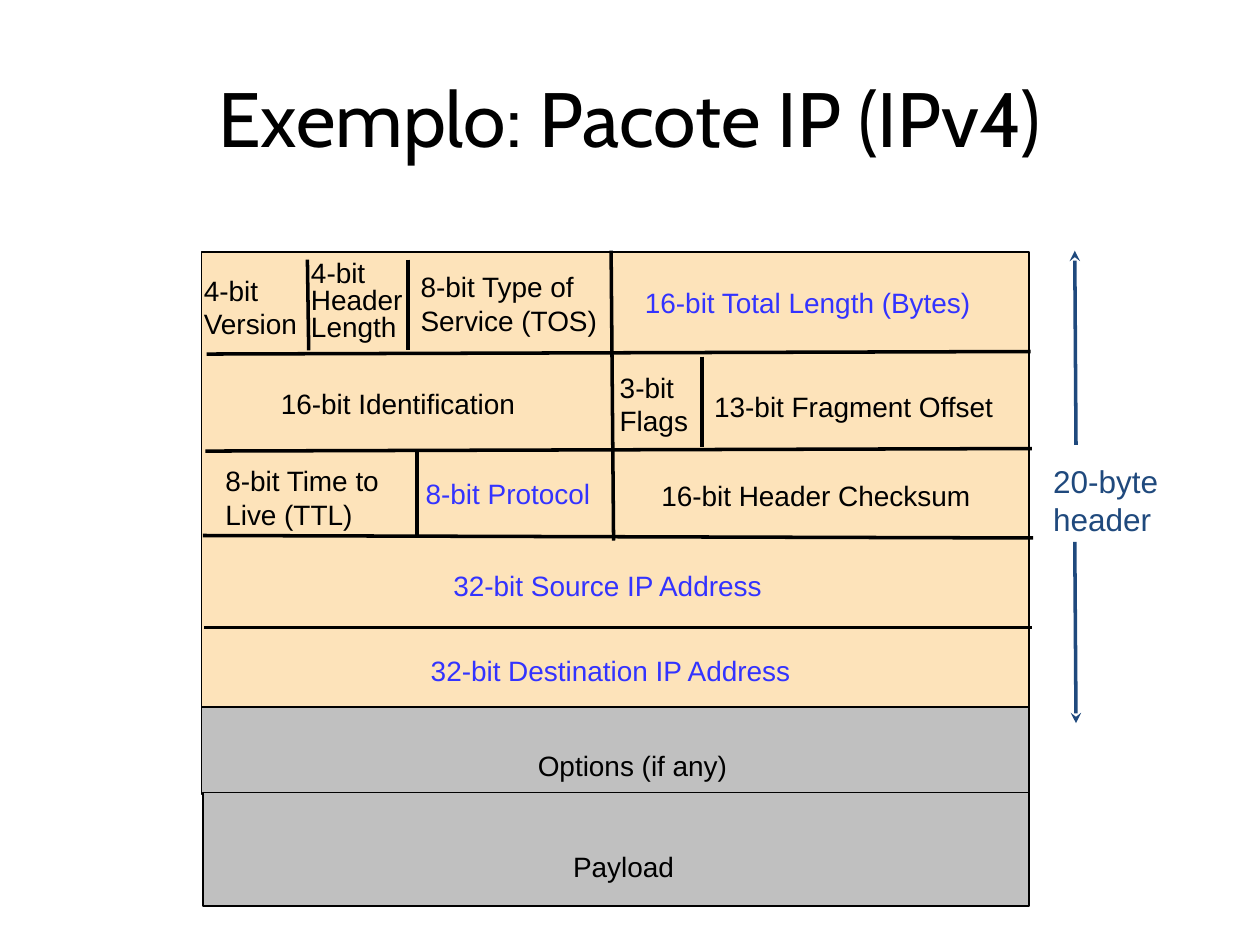
from lxml.etree import SubElement
from pptx import Presentation
from pptx.dml.color import RGBColor
from pptx.enum.shapes import MSO_CONNECTOR, MSO_SHAPE
from pptx.enum.text import MSO_ANCHOR, MSO_AUTO_SIZE, PP_ALIGN
from pptx.oxml.ns import qn
from pptx.util import Inches, Pt

COLORS = {
    "black": "000000",
    "highlight": "3333FF",
    "navy": "1F497D",
    "header": "FDE3BA",
    "body": "C0C0C0",
}

presentation = Presentation()
presentation.slide_width = Inches(10)
presentation.slide_height = Inches(7.5)
slide = presentation.slides.add_slide(presentation.slide_layouts[6])


def add_text(box, text, color="black", size=16, font="Arial", spacing=None):
    """Add a text box with one paragraph per line of text."""
    shape = slide.shapes.add_textbox(*map(Inches, box))
    frame = shape.text_frame
    frame.text = text
    frame.word_wrap = False
    frame.auto_size = MSO_AUTO_SIZE.SHAPE_TO_FIT_TEXT
    for paragraph in frame.paragraphs:
        paragraph.line_spacing = spacing
        formats = {"name": font, "size": Pt(size)}
        for name, value in formats.items():
            setattr(paragraph.runs[0].font, name, value)
        paragraph.runs[0].font.color.rgb = RGBColor.from_string(COLORS[color])
    return frame


def add_line(start, end, color="black", arrow=None):
    """Add a line; arrow is headEnd (at start) or tailEnd (at end)."""
    connector = slide.shapes.add_connector(
        MSO_CONNECTOR.STRAIGHT, *map(Inches, start + end))
    connector.line.width = Pt(2)
    connector.line.color.rgb = RGBColor.from_string(COLORS[color])
    if arrow:
        SubElement(connector.line._get_or_add_ln(), qn(f"a:{arrow}"), type="stealth")
    SubElement(connector._element.spPr, qn("a:effectLst"))


title = add_text((0.5, 0.3, 9, 1.25), "Exemplo: Pacote IP (IPv4)", size=44, font="Cabin")
title_format = {
    "word_wrap": True,
    "auto_size": MSO_AUTO_SIZE.NONE,
    "vertical_anchor": MSO_ANCHOR.MIDDLE,
}
for name, value in title_format.items():
    setattr(title, name, value)
title.paragraphs[0].alignment = PP_ALIGN.CENTER

packet_parts = [
    ((1.6, 2, 6.57, 3.62), "header"),
    ((1.6, 5.61, 6.57, 0.69), "body"),
    ((1.61, 6.29, 6.56, 0.9), "body"),
]
for box, color in packet_parts:
    shape = slide.shapes.add_shape(MSO_SHAPE.RECTANGLE, *map(Inches, box))
    shape.shadow.inherit = False
    shape.fill.solid()
    shape.fill.fore_color.rgb = RGBColor.from_string(COLORS[color])
    shape.line.color.rgb = RGBColor.from_string(COLORS["black"])
    shape.line.width = Pt(1)

row_dividers = [
    ((1.64, 2.81), (8.18, 2.79)),
    ((1.63, 3.58), (8.19, 3.56)),
    ((1.61, 4.25), (8.2, 4.27)),
    ((1.62, 4.98), (8.19, 4.98)),
]
field_dividers = [
    ((4.85, 1.99), (4.87, 4.29)),
    ((3.24, 2.06), (3.24, 2.78)),
    ((2.44, 2.06), (2.45, 2.78)),
    ((5.57, 2.83), (5.57, 3.55)),
    ((3.31, 3.59), (3.31, 4.25)),
]
for start, end in row_dividers + field_dividers:
    add_line(start, end)

fields = [
    ((1.52, 2.12, 0.95, 0.64), "4-bit\nVersion", "black"),
    ((3.24, 2.09, 1.66, 0.63), "8-bit Type of\nService (TOS)", "black"),
    ((5.02, 2.22, 2.81, 0.37), "16-bit Total Length (Bytes)", "highlight"),
    ((2.13, 3.02, 2.08, 0.37), "16-bit Identification", "black"),
    ((4.82, 2.89, 0.78, 0.63), "3-bit\nFlags", "black"),
    ((5.57, 3.04, 2.44, 0.37), "13-bit Fragment Offset", "black"),
    ((1.69, 3.63, 1.43, 0.64), "8-bit Time to\nLive (TTL)", "black"),
    ((3.28, 3.73, 1.52, 0.37), "8-bit Protocol", "highlight"),
    ((5.15, 3.75, 2.68, 0.37), "16-bit Header Checksum", "black"),
    ((3.5, 4.46, 2.68, 0.37), "32-bit Source IP Address", "highlight"),
    ((3.32, 5.14, 3.09, 0.37), "32-bit Destination IP Address", "highlight"),
    ((4.17, 5.89, 1.71, 0.36), "Options (if any)", "black"),
    ((4.45, 6.69, 1.01, 0.37), "Payload", "black"),
]
for box, text, color in fields:
    add_text(box, text, color)
add_text((2.37, 2.03, 0.94, 0.75), "4-bit\nHeader\nLength", spacing=0.8)

add_line((8.53, 1.99), (8.54, 3.53), "navy", "headEnd")
add_text((8.26, 3.62, 1.07, 0.7), "20-byte\nheader", "navy", size=18)
add_line((8.53, 4.3), (8.54, 5.74), "navy", "tailEnd")

presentation.save("out.pptx")
